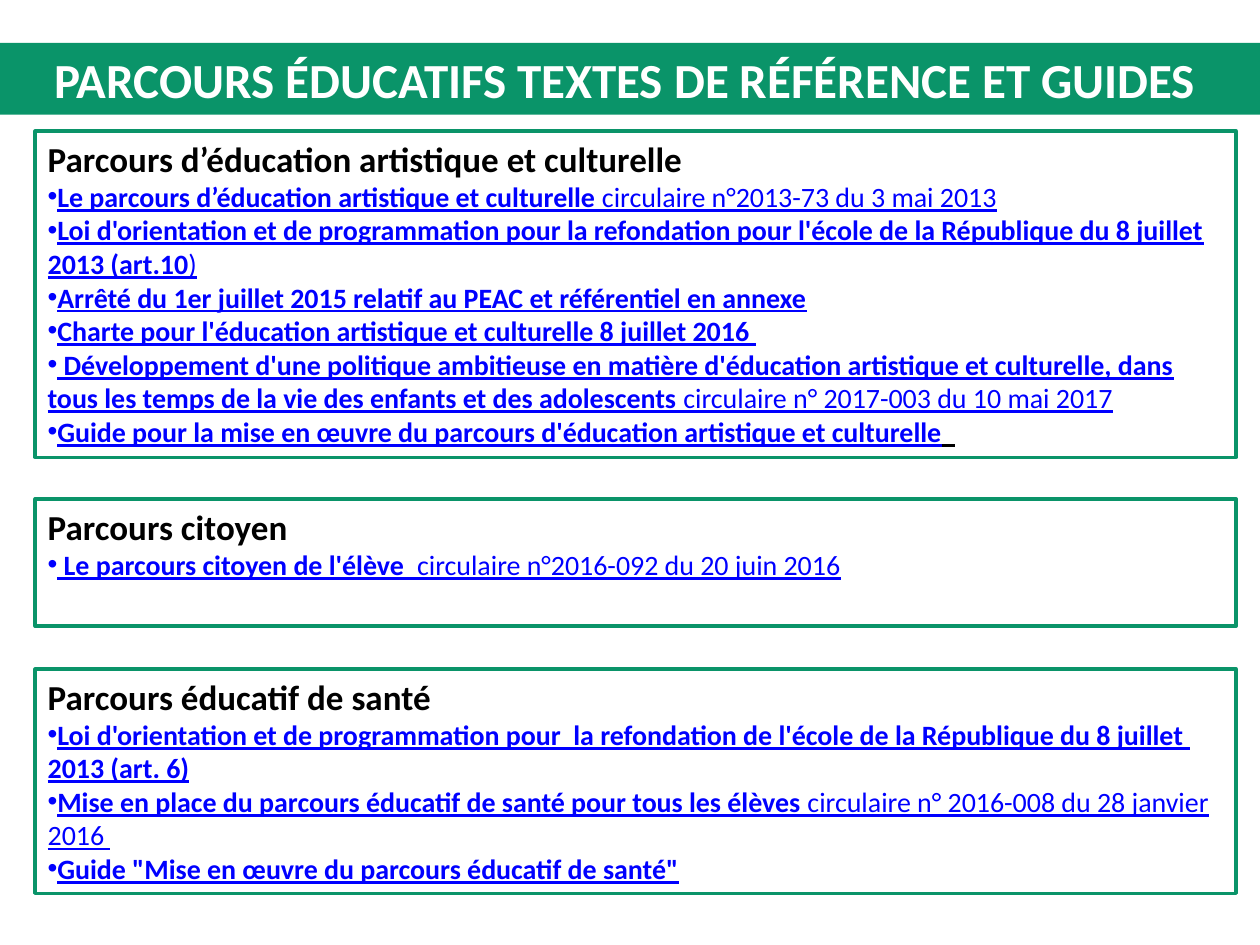
from lxml import etree
from pptx import Presentation
from pptx.dml.color import RGBColor
from pptx.enum import shapes, text
from pptx.oxml import ns
from pptx.util import Inches, Pt

GREEN = RGBColor(0x0A, 0x94, 0x69)
BLUE = RGBColor(0x00, 0x00, 0xFF)
BLACK = RGBColor(0x00, 0x00, 0x00)
WHITE = RGBColor(0xFF, 0xFF, 0xFF)
FONT = "Calibri"

STYLES = {"strong": (True, BLUE), "plain": (False, BLUE), "dark": (True, BLACK)}

TITLE = "PARCOURS ÉDUCATIFS TEXTES DE RÉFÉRENCE ET GUIDES "
SECTIONS = [
    ("Parcours d’éducation artistique et culturelle", 1.04, 2.59, [
        [("Le parcours d’éducation artistique et culturelle ", "strong"),
         ("circulaire n°2013-73 du 3 mai 2013", "plain")],
        [("Loi d'orientation et de programmation pour la refondation pour l'école "
          "de la République du 8 juillet 2013 (art.10", "strong"), (")", "plain")],
        [("Arrêté du 1er juillet 2015 relatif au PEAC et référentiel en annexe", "strong")],
        [("Charte pour l'éducation artistique et culturelle 8 juillet 2016 ", "strong")],
        [(" Développement d'une politique ambitieuse en matière d'éducation artistique "
          "et culturelle, dans tous les temps de la vie des enfants et des adolescents ",
          "strong"),
         ("circulaire n° 2017-003 du 10 mai 2017", "plain")],
        [("Guide pour la mise en œuvre du parcours d'éducation artistique et culturelle",
          "strong"), ("  ", "dark")],
    ]),
    ("Parcours citoyen", 3.96, 1.01, [
        [(" Le parcours citoyen de l'élève  ", "strong"),
         ("circulaire n°2016-092 du 20 juin 2016", "plain")],
    ]),
    ("Parcours éducatif de santé", 5.31, 1.78, [
        [("Loi d'orientation et de programmation pour  la refondation de l'école "
          "de la République du 8 juillet  2013 (art. 6)", "strong")],
        [("Mise en place du parcours éducatif de santé pour tous les élèves", "strong"),
         (" circulaire n° 2016-008 du 28 janvier 2016 ", "plain")],
        [("Guide \"Mise en œuvre du parcours éducatif de santé\"", "strong")],
    ]),
]


def add_box(slide, left, top, width, height, fill, anchor):
    box = slide.shapes.add_shape(
        shapes.MSO_SHAPE.RECTANGLE,
        Inches(left), Inches(top), Inches(width), Inches(height))
    box.shadow.inherit = False
    box.fill.solid()
    box.fill.fore_color.rgb = fill
    box.text_frame.word_wrap = True
    box.text_frame.vertical_anchor = anchor
    return box


def add_run(paragraph, content, size, color, bold=True, underline=False):
    run = paragraph.add_run()
    run.text = content
    font = run.font
    font.name = FONT
    font.size = Pt(size)
    font.bold = bold
    font.underline = underline
    font.color.rgb = color


def add_bullet(paragraph):
    properties = paragraph._p.get_or_add_pPr()
    etree.SubElement(properties, ns.qn("a:buFont"), typeface="Arial")
    etree.SubElement(properties, ns.qn("a:buChar"), char="•")


def add_section(slide, heading, top, height, items):
    box = add_box(slide, 0.28, top, 9.53, height, WHITE, text.MSO_ANCHOR.TOP)
    box.line.color.rgb = GREEN
    box.line.width = Pt(2)
    paragraph = box.text_frame.paragraphs[0]
    paragraph.alignment = text.PP_ALIGN.LEFT
    add_run(paragraph, heading, 20, BLACK)
    for item in items:
        paragraph = box.text_frame.add_paragraph()
        paragraph.alignment = text.PP_ALIGN.LEFT
        add_bullet(paragraph)
        for content, style in item:
            bold, color = STYLES[style]
            add_run(paragraph, content, 16, color, bold, underline=True)


def add_title(slide):
    banner = add_box(slide, 0, 0.34, 10, 0.57, GREEN, text.MSO_ANCHOR.TOP)
    banner.line.fill.background()
    paragraph = banner.text_frame.paragraphs[0]
    paragraph.alignment = text.PP_ALIGN.CENTER
    add_run(paragraph, TITLE, 28, WHITE)


def main():
    presentation = Presentation()
    presentation.slide_width = Inches(10)
    presentation.slide_height = Inches(7.5)
    slide = presentation.slides.add_slide(presentation.slide_layouts[6])
    for section in SECTIONS:
        add_section(slide, *section)
    add_title(slide)
    presentation.save("out.pptx")


if __name__ == "__main__":
    main()
